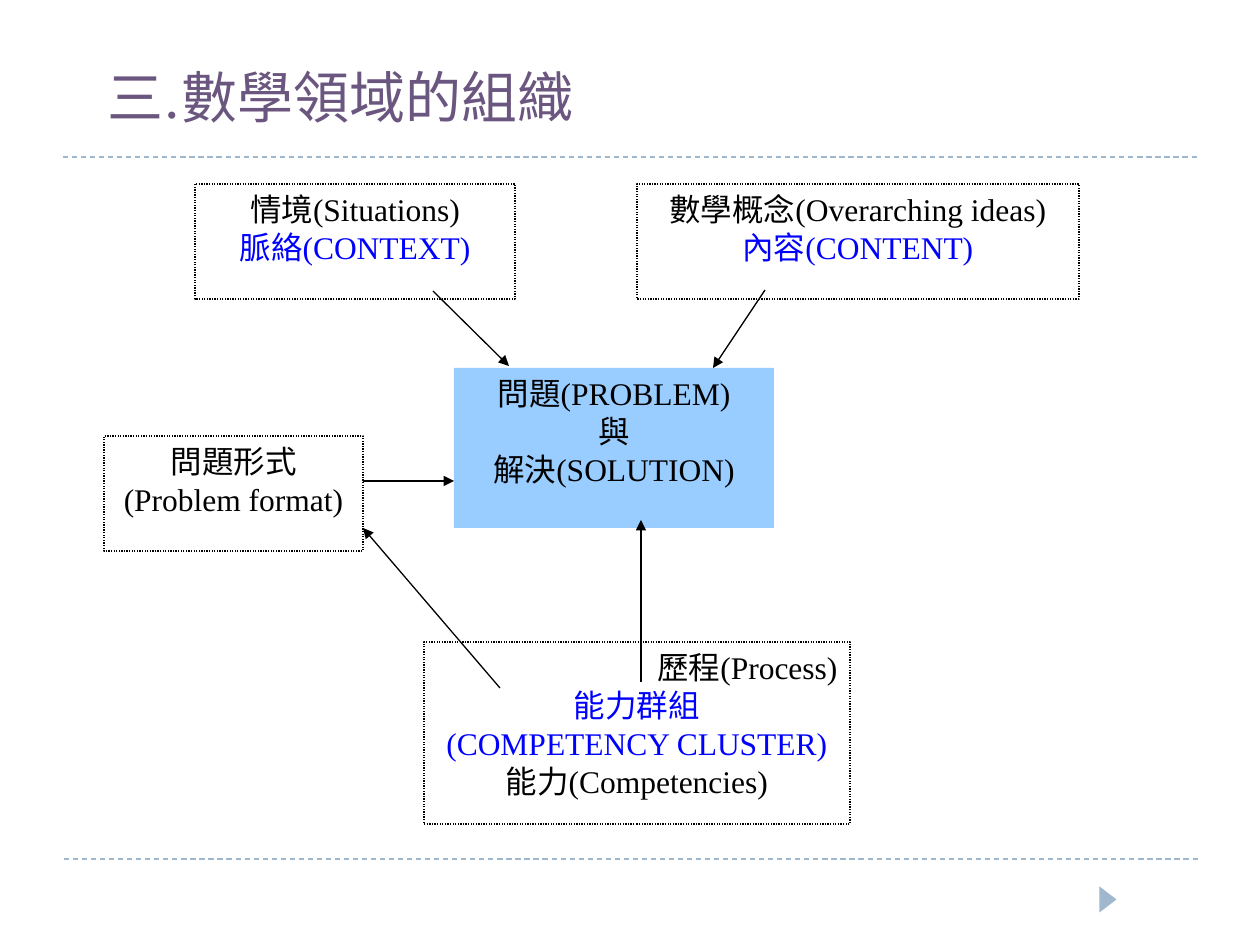
from lxml import etree
from pptx import Presentation
from pptx.dml.color import RGBColor
from pptx.enum.dml import MSO_LINE
from pptx.enum.shapes import MSO_CONNECTOR, MSO_SHAPE
from pptx.enum.text import MSO_ANCHOR, PP_ALIGN
from pptx.oxml.ns import qn
from pptx.util import Pt

PX = 914400 / 126
BLACK = RGBColor(0x00, 0x00, 0x00)
WHITE = RGBColor(0xFF, 0xFF, 0xFF)
BLUE = RGBColor(0x00, 0x00, 0xFF)
SKY = RGBColor(0x99, 0xCC, 0xFF)
STEEL = RGBColor(0x9F, 0xB8, 0xCD)
PURPLE = RGBColor(0x6B, 0x56, 0x80)
CENTER, RIGHT, LEFT = PP_ALIGN.CENTER, PP_ALIGN.RIGHT, PP_ALIGN.LEFT
DASH, DOTS = MSO_LINE.DASH, MSO_LINE.ROUND_DOT


def write(paragraph, text, size=18, font="Times New Roman", color=BLACK, align=CENTER):
    paragraph.alignment = align
    run = paragraph.add_run()
    run.text = text
    run.font.size = Pt(size)
    run.font.name = font
    run.font.color.rgb = color


def add_line(shapes, points, color):
    line = shapes.add_connector(MSO_CONNECTOR.STRAIGHT, *(round(v * PX) for v in points))
    line.line.color.rgb = color
    line.line.width = Pt(0.75)
    etree.SubElement(line._element.spPr, qn("a:effectLst"))
    return line


presentation = Presentation()
presentation.slide_width = round(1260 * PX)
presentation.slide_height = round(945 * PX)
slide = presentation.slides.add_slide(presentation.slide_layouts[5])
shapes = slide.shapes

# Dashed rules and corner triangle
for left, y in ((64, 859), (63, 157)):
    add_line(shapes, (left, y, left + 1134, y), STEEL).line.dash_style = DASH
triangle = shapes.add_shape(
    MSO_SHAPE.ISOSCELES_TRIANGLE, *(round(v * PX) for v in (1095, 891, 26, 17)))
triangle.rotation = 90
triangle.shadow.inherit = False
triangle.fill.solid()
triangle.fill.fore_color.rgb = STEEL
triangle.line.fill.background()

# Title
title = shapes.title
title.left, title.top, title.width, title.height = (
    round(v * PX) for v in (95, 21, 946, 115))
title.text_frame.vertical_anchor = MSO_ANCHOR.BOTTOM
write(title.text_frame.paragraphs[0], "三.數學領域的組織", size=32,
      font="TeX Gyre Bonum", color=PURPLE, align=LEFT)

# Boxes: position, fill, lines of (text, colour, alignment)
boxes = [
    ((195, 184, 320, 115), WHITE,
     [("情境(Situations)", BLACK, CENTER), ("脈絡(CONTEXT)", BLUE, CENTER)]),
    ((637, 184, 442, 115), WHITE,
     [("數學概念(Overarching ideas)", BLACK, CENTER), ("內容(CONTENT)", BLUE, CENTER)]),
    ((454, 368, 320, 160), SKY,
     [("問題(PROBLEM)", BLACK, CENTER), ("與", BLACK, CENTER),
      ("解決(SOLUTION)", BLACK, CENTER)]),
    ((424, 642, 426, 182), WHITE,
     [("歷程(Process)", BLACK, RIGHT), ("能力群組", BLUE, CENTER),
      ("(COMPETENCY CLUSTER)", BLUE, CENTER), ("能力(Competencies)", BLACK, CENTER)]),
    ((104, 436, 259, 115), WHITE,
     [("問題形式", BLACK, CENTER), ("(Problem format)", BLACK, CENTER)]),
]
for position, fill, lines in boxes:
    box = shapes.add_shape(MSO_SHAPE.RECTANGLE, *(round(v * PX) for v in position))
    box.shadow.inherit = False
    box.fill.solid()
    box.fill.fore_color.rgb = fill
    if fill == WHITE:
        box.line.color.rgb = BLACK
        box.line.width = Pt(0.75)
        box.line.dash_style = DOTS
    else:
        box.line.fill.background()
    frame = box.text_frame
    frame.word_wrap = True
    frame.vertical_anchor = MSO_ANCHOR.TOP
    for index, (text, color, align) in enumerate(lines):
        paragraph = frame.add_paragraph() if index else frame.paragraphs[0]
        write(paragraph, text, color=color, align=align)

# Arrows between the boxes
arrows = [
    (433, 291, 509, 366),
    (765, 290, 713, 368),
    (641, 682, 641, 520),
    (500, 688, 363, 528),
    (363, 481, 454, 481),
]
for points in arrows:
    arrow = add_line(shapes, points, BLACK)
    etree.SubElement(arrow.line._get_or_add_ln(), qn("a:tailEnd"), type="triangle")

presentation.save("out.pptx")
